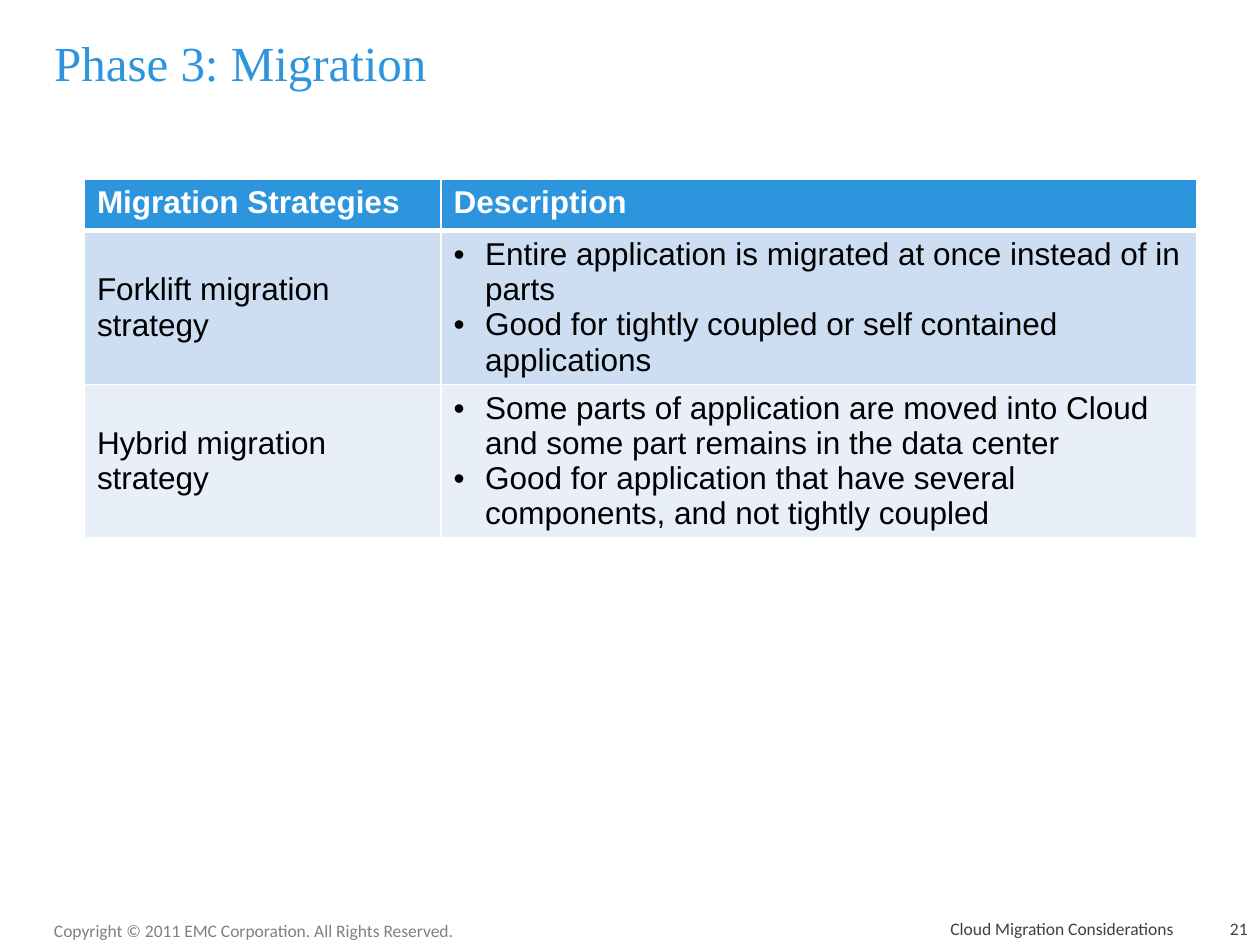
from lxml.etree import SubElement
from pptx import Presentation
from pptx.dml.color import RGBColor
from pptx.enum.text import MSO_ANCHOR as Anchor, PP_ALIGN as Align
from pptx.oxml.ns import qn
from pptx.util import Emu, Inches, Pt

# Content
TITLE = "Phase 3: Migration"
HEADINGS = ("Migration Strategies", "Description")
STRATEGIES = [
    ("Forklift migration strategy", [
        "Entire application is migrated at once instead of in parts",
        "Good for tightly coupled or self contained applications",
    ]),
    ("Hybrid migration strategy", [
        "Some parts of application are moved into Cloud and some part remains in the data center",
        "Good for application that have several components, and not tightly coupled",
    ]),
]

# Colours
BLUE = RGBColor(0x2C, 0x95, 0xDD)
WHITE = RGBColor(0xFF, 0xFF, 0xFF)
BLACK = RGBColor(0x00, 0x00, 0x00)
GRAY = RGBColor(0x80, 0x80, 0x80)
DARK_GRAY = RGBColor(0x40, 0x40, 0x40)
BANDS = (RGBColor(0xCD, 0xDD, 0xF2), RGBColor(0xE8, 0xEF, 0xF9))

# Footer: text, left, width, alignment, anchor, colour
FOOTERS = [
    ("Copyright © 2011 EMC Corporation. All Rights Reserved.",
     0.33, 3.42, Align.LEFT, Anchor.TOP, GRAY),
    ("Cloud Migration Considerations", 4.83, 4.58, Align.RIGHT, Anchor.BOTTOM, DARK_GRAY),
    ("21", 9.5, 0.5, Align.RIGHT, Anchor.BOTTOM, DARK_GRAY),
]

# Grid
COLUMN_WIDTHS = (2.83, 6)
HEADER_HEIGHT, ROW_HEIGHT = 0.41, 1.2
BULLET_INDENT = Inches(0.25)


def style(frame, name, size, color, bold=False):
    for para in frame.paragraphs:
        for span in para.runs:
            font = span.font
            font.name, font.size, font.bold = name, Pt(size), bold
            font.color.rgb = color


def add_bullet(para):
    properties = para._p.get_or_add_pPr()
    properties.set("marL", str(BULLET_INDENT))
    properties.set("indent", str(-BULLET_INDENT))
    SubElement(properties, qn("a:buFont"), typeface="Arial")
    SubElement(properties, qn("a:buChar"), char="•")


def add_borders(cell, row):
    widths = {"lnL": 1, "lnR": 1, "lnT": 3 if row == 1 else 1, "lnB": 3 if row == 0 else 1}
    for side, points in widths.items():
        line = SubElement(cell._tc.get_or_add_tcPr(), qn(f"a:{side}"), w=str(Pt(points)))
        fill = SubElement(line, qn("a:solidFill"))
        SubElement(fill, qn("a:srgbClr"), val=str(WHITE))


def fill_cell(cell, row, lines, fill, color, bulleted=False):
    frame = cell.text_frame
    frame.text = "\n".join(lines)
    if bulleted:
        for para in frame.paragraphs:
            add_bullet(para)
    style(frame, "Arial", 18, color, bold=row == 0)
    add_borders(cell, row)
    cell.fill.solid()
    cell.fill.fore_color.rgb = fill


def add_title(page):
    title = page.shapes.title
    title.left, title.top = Inches(0.33), Inches(0.08)
    title.width, title.height = Inches(9.25), Inches(0.83)
    frame = title.text_frame
    frame.text = TITLE
    frame.vertical_anchor = Anchor.MIDDLE
    frame.paragraphs[0].alignment = Align.LEFT
    style(frame, "Times New Roman", 28, BLUE)


def add_strategy_table(page):
    height = HEADER_HEIGHT + ROW_HEIGHT * len(STRATEGIES)
    table = page.shapes.add_table(
        len(STRATEGIES) + 1, len(HEADINGS), Inches(0.67), Inches(1.42),
        Inches(sum(COLUMN_WIDTHS)), Inches(height)).table
    for column, width in zip(table.columns, COLUMN_WIDTHS):
        column.width = Inches(width)
    for row, line in enumerate(table.rows):
        line.height = Inches(ROW_HEIGHT if row else HEADER_HEIGHT)

    for column, heading in enumerate(HEADINGS):
        fill_cell(table.cell(0, column), 0, [heading], BLUE, WHITE)
    for row, (strategy, points) in enumerate(STRATEGIES, start=1):
        band = BANDS[(row - 1) % len(BANDS)]
        name_cell = table.cell(row, 0)
        fill_cell(name_cell, row, [strategy], band, BLACK)
        name_cell.vertical_anchor = Anchor.MIDDLE
        fill_cell(table.cell(row, 1), row, points, band, BLACK, bulleted=True)


def add_footers(page):
    for text, left, width, alignment, anchor, color in FOOTERS:
        box = page.shapes.add_textbox(Inches(left), Inches(7.25), Inches(width), Inches(0.25))
        frame = box.text_frame
        frame.word_wrap = True
        frame.vertical_anchor = anchor
        frame.text = text
        frame.paragraphs[0].alignment = alignment
        style(frame, "Calibri", 10, color)


def main():
    deck = Presentation()
    deck.slide_width, deck.slide_height = Inches(10), Inches(7.5)
    page = deck.slides.add_slide(deck.slide_layouts[5])
    add_title(page)
    add_strategy_table(page)
    add_footers(page)
    deck.save("out.pptx")


if __name__ == "__main__":
    main()
